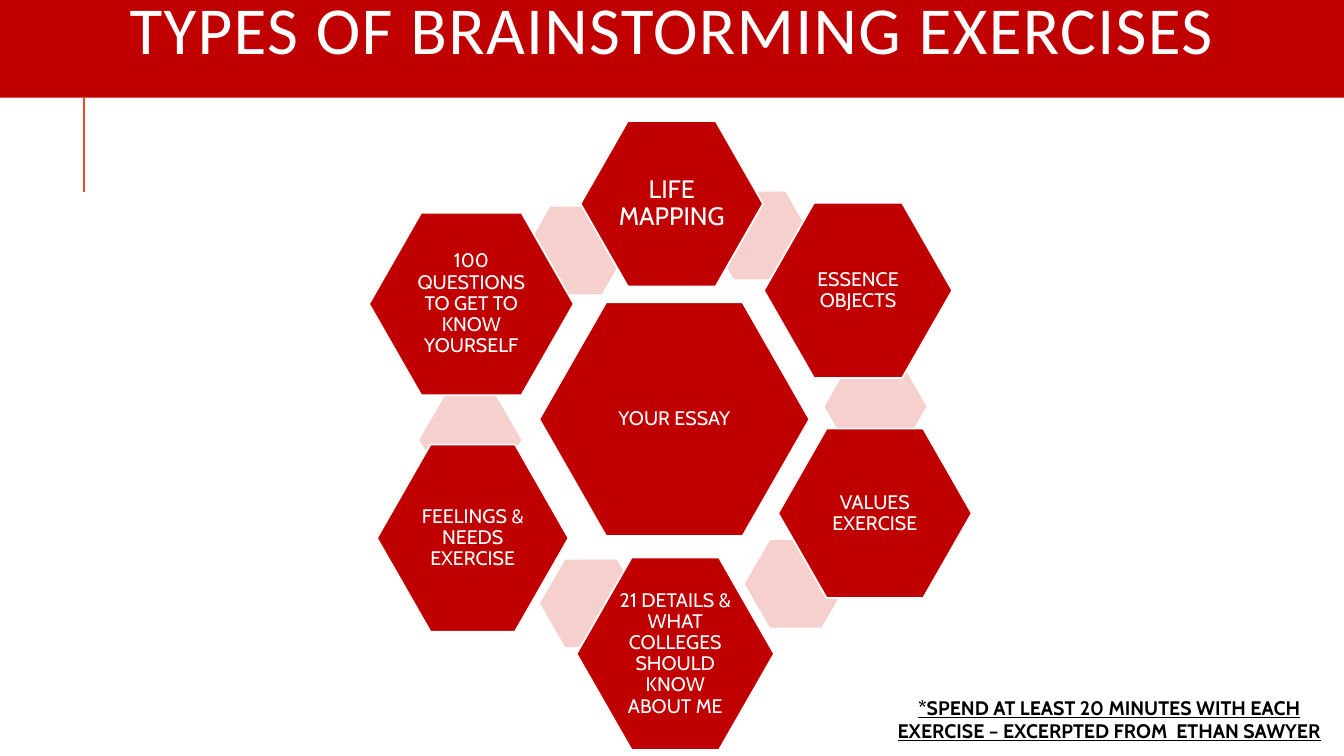
from dataclasses import dataclass

from lxml import etree
from pptx import Presentation
from pptx.dml.color import RGBColor
from pptx.enum.shapes import MSO_CONNECTOR, MSO_SHAPE
from pptx.enum.text import MSO_ANCHOR, MSO_AUTO_SIZE, PP_ALIGN
from pptx.oxml.ns import qn
from pptx.shapes.autoshape import Shape
from pptx.slide import Slide
from pptx.util import Cm, Pt

HEXAGON = MSO_SHAPE.HEXAGON
STRAIGHT = MSO_CONNECTOR.STRAIGHT
CENTER = PP_ALIGN.CENTER
MIDDLE, TOP = MSO_ANCHOR.MIDDLE, MSO_ANCHOR.TOP
NO_AUTOFIT = MSO_AUTO_SIZE.NONE

RED, PINK, ORANGE = "C00000", "F6D0CD", "E84C22"
WHITE, BLACK = "FFFFFF", "000000"
TITLE_FONT, BODY_FONT = "Calibri", "Cabin"
LINK_WIDTH, LINK_HEIGHT = 2.57, 2.21


@dataclass(frozen=True)
class Hexagon:
    left: float
    top: float
    width: float = LINK_WIDTH
    height: float = LINK_HEIGHT
    text: str = ""
    size: int = 14


LINKS = [
    Hexagon(13.23, 5.21),
    Hexagon(17.86, 4.83),
    Hexagon(20.78, 9.14),
    Hexagon(18.77, 13.61),
    Hexagon(13.61, 14.1),
    Hexagon(10.57, 9.98),
]
TOPICS = [
    Hexagon(13.59, 7.62, 6.81, 5.89, "YOUR ESSAY"),
    Hexagon(14.63, 3.05, 4.6, 4.17, "LIFE MAPPING", 18),
    Hexagon(19.25, 5.11, 4.75, 4.42, "ESSENCE OBJECTS"),
    Hexagon(19.61, 10.8, 4.88, 4.27, "VALUES EXERCISE"),
    Hexagon(14.53, 14.05, 4.98, 4.85,
            "21 DETAILS & WHAT COLLEGES SHOULD KNOW ABOUT ME"),
    Hexagon(9.5, 11.2, 4.83, 4.72, "FEELINGS & NEEDS EXERCISE"),
    Hexagon(9.3, 5.36, 5.16, 4.6, "100 QUESTIONS TO GET TO KNOW YOURSELF"),
]


def color(value: str) -> RGBColor:
    return RGBColor.from_string(value)


def write_text(shape: Shape, text: str, *, size: int, font: str = BODY_FONT,
               fill: str = WHITE, bold: bool = False, underline: bool = False,
               line_spacing: float = 1.0, letter_spacing: int = 0,
               inset: float | None = None, anchor: MSO_ANCHOR = MIDDLE) -> None:
    frame = shape.text_frame
    frame.word_wrap = True
    frame.auto_size = NO_AUTOFIT
    frame.vertical_anchor = anchor
    if inset is not None:
        frame.margin_left = frame.margin_right = Cm(inset)
        frame.margin_top = frame.margin_bottom = Cm(inset)
    paragraph = frame.paragraphs[0]
    paragraph.alignment = CENTER
    paragraph.line_spacing = line_spacing
    run = paragraph.add_run()
    run.text = text
    run.font.name = font
    run.font.size = Pt(size)
    run.font.bold = bold
    run.font.underline = underline
    run.font.color.rgb = color(fill)
    if letter_spacing:
        run._r.get_or_add_rPr().set("spc", str(letter_spacing * 100))


def add_title(slide: Slide) -> None:
    title = slide.shapes.title
    title.left, title.top = Cm(0), Cm(-0.69)
    title.width, title.height = Cm(33.87), Cm(3.15)
    title.fill.solid()
    title.fill.fore_color.rgb = color(RED)
    write_text(title, "TYPES OF BRAINSTORMING EXERCISES", size=48,
               font=TITLE_FONT, line_spacing=0.8, letter_spacing=1)


def add_accent_line(slide: Slide) -> None:
    line = slide.shapes.add_connector(STRAIGHT, Cm(2.11), Cm(4.83), Cm(2.11), Cm(2.46))
    line.line.color.rgb = color(ORANGE)
    line.line.width = Pt(1.5)
    etree.SubElement(line._element.spPr, qn("a:effectLst"))


def add_hexagon(slide: Slide, hexagon: Hexagon, fill: str) -> None:
    shape = slide.shapes.add_shape(HEXAGON, Cm(hexagon.left), Cm(hexagon.top),
                                   Cm(hexagon.width), Cm(hexagon.height))
    shape.shadow.inherit = False
    shape.adjustments[0] = 0.286 if hexagon.text else 0.289
    shape.adjustments[1] = 1.1547
    shape.fill.solid()
    shape.fill.fore_color.rgb = color(fill)
    if hexagon.text:
        shape.line.color.rgb = color(WHITE)
        shape.line.width = Pt(1.25)
        write_text(shape, hexagon.text, size=hexagon.size,
                   line_spacing=0.9, inset=0.05)
    else:
        shape.line.fill.background()


def add_note(slide: Slide) -> None:
    note = slide.shapes.add_textbox(Cm(22.05), Cm(17.4), Cm(11.81), Cm(1.45))
    write_text(note, "*SPEND AT LEAST 20 MINUTES WITH EACH EXERCISE – "
               "EXCERPTED FROM  ETHAN SAWYER", size=14, fill=BLACK,
               bold=True, underline=True, anchor=TOP)


def main() -> None:
    presentation = Presentation()
    presentation.slide_width, presentation.slide_height = Cm(33.87), Cm(19.05)
    slide = presentation.slides.add_slide(presentation.slide_layouts[5])
    add_title(slide)
    add_accent_line(slide)
    for link in LINKS:
        add_hexagon(slide, link, PINK)
    for topic in TOPICS:
        add_hexagon(slide, topic, RED)
    add_note(slide)
    presentation.save("out.pptx")


if __name__ == "__main__":
    main()
